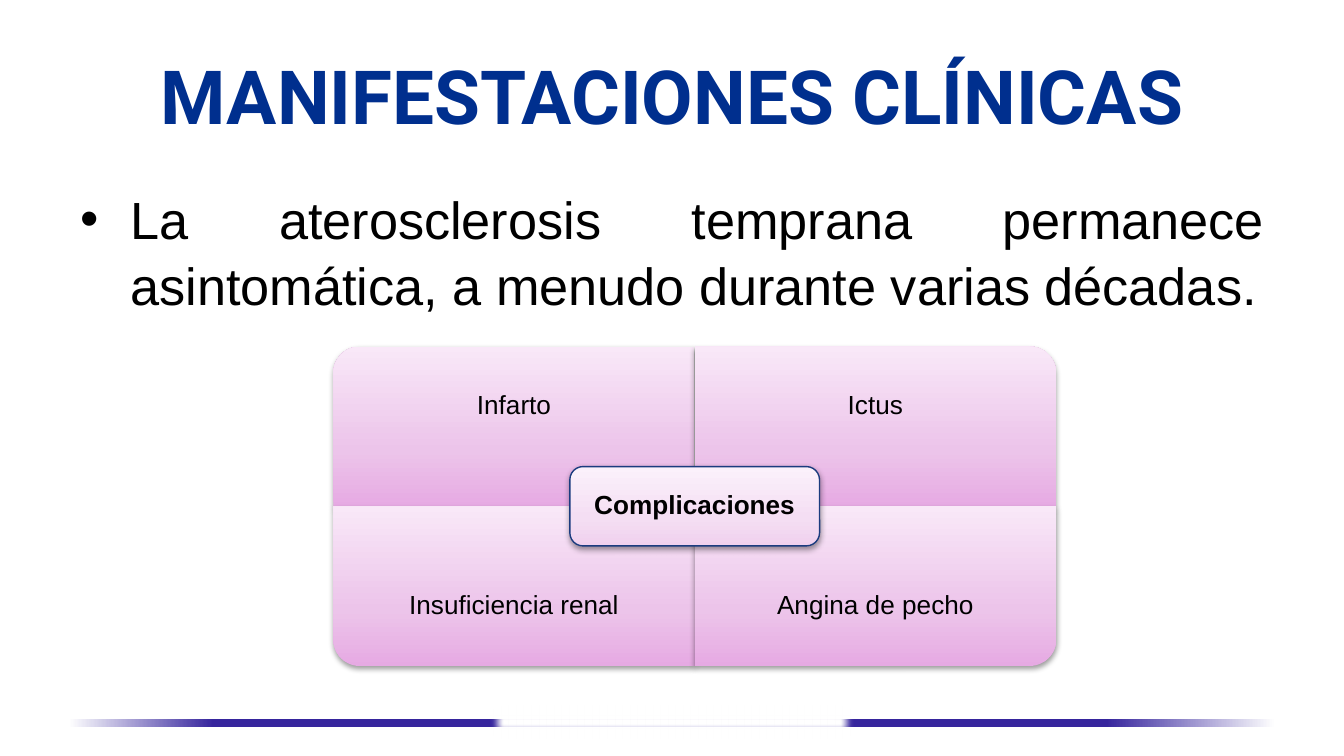
from pptx import Presentation
from pptx import util as u
from pptx.dml.color import RGBColor
from pptx.enum import shapes, text
from pptx.oxml import parse_xml
from pptx.oxml.ns import nsdecls, qn

COLORS = {"title": "002F8E", "text": "000000", "white": "FFFFFF",
          "bar": "36259D", "hub_line": "1B3B7F"}
BAR_STOPS = [(0, COLORS["white"]), (12, COLORS["bar"]),
             (86, COLORS["bar"]), (100, COLORS["white"])]
CELL_STOPS = [(0, "E6AAE3"), (35, "ECC4EA"), (100, "F9E8F8")]
HUB_STOPS = [(0, "F0D1EE"), (35, "F4DEF3"), (100, "FBF1FB")]


def element(tag, attributes="", inner=""):
    return parse_xml(f"<a:{tag} {nsdecls('a')} {attributes}>{inner}</a:{tag}>")


class ClinicalSlide:
    """Holds the style and the current slide; lengths are in centimetres."""
    font = "Arial"

    def __init__(self, deck):
        self.slide = deck.slides.add_slide(deck.slide_layouts[5])

    def style(self, paragraph, size, color="text", bold=False, font=None):
        for run in paragraph.runs:
            run.font.name = font or self.font
            run.font.size = u.Pt(size)
            run.font.bold = bold
            run.font.color.rgb = RGBColor.from_string(COLORS[color])

    def title(self, words, left, top, width, height):
        heading = self.slide.shapes.title
        heading.left, heading.top = u.Cm(left), u.Cm(top)
        heading.width, heading.height = u.Cm(width), u.Cm(height)
        frame = heading.text_frame
        frame.text = words
        frame.vertical_anchor = text.MSO_ANCHOR.MIDDLE
        frame.paragraphs[0].alignment = text.PP_ALIGN.CENTER
        self.style(frame.paragraphs[0], 40, "title", True, "Roboto")

    def textbox(self, words, left, top, width, height):
        box = self.slide.shapes.add_textbox(u.Cm(left), u.Cm(top), u.Cm(width), u.Cm(height))
        box.text_frame.word_wrap = True
        box.text_frame.text = words
        return box.text_frame

    def bullet(self, words, *place):
        paragraph = self.textbox(words, *place).paragraphs[0]
        paragraph.alignment = text.PP_ALIGN.JUSTIFY
        paragraph.line_spacing = 1.05
        properties = paragraph._p.get_or_add_pPr()
        properties.set("marL", str(u.Cm(0.95)))
        properties.set("indent", str(-u.Cm(0.95)))
        properties.append(element("buFont", 'typeface="Arial"'))
        properties.append(element("buChar", 'char="•"'))
        self.style(paragraph, 28)

    def label(self, words, *place, inset=0.28, bold=False):
        frame = self.textbox(words, *place)
        frame.vertical_anchor = text.MSO_ANCHOR.MIDDLE
        frame.margin_left = frame.margin_right = u.Cm(inset)
        frame.margin_top = frame.margin_bottom = u.Cm(inset)
        frame.paragraphs[0].alignment = text.PP_ALIGN.CENTER
        frame.paragraphs[0].line_spacing = 0.9
        self.style(frame.paragraphs[0], 14, bold=bold)

    def block(self, kind, left, top, width, height, rotation=0, line=None):
        shape = self.slide.shapes.add_shape(
            kind, u.Cm(left), u.Cm(top), u.Cm(width), u.Cm(height))
        shape.rotation = rotation
        shape.shadow.inherit = False
        if line:
            shape.line.color.rgb = RGBColor.from_string(COLORS[line])
            shape.line.width = u.Pt(0.75)
        else:
            shape.line.fill.background()
        return shape

    def gradient(self, shape, stops, angle):
        inner = "".join(f'<a:gs pos="{position * 1000}"><a:srgbClr val="{color}"/></a:gs>'
                        for position, color in stops)
        fill = element("gradFill", 'rotWithShape="0"',
                       f'<a:gsLst>{inner}</a:gsLst><a:lin ang="{angle * 60000}" scaled="0"/>')
        shape._element.spPr.find(qn("a:prstGeom")).addnext(fill)

    def effect(self, shape, tag, attributes, inner=""):
        effects = shape._element.spPr.find(qn("a:effectLst"))
        effects.append(element(tag, attributes, inner))

    def raised_block(self, kind, stops, *place, **options):
        shape = self.block(kind, *place, **options)
        self.gradient(shape, stops, 270)
        self.effect(shape, "outerShdw",
                    'blurRad="40000" dist="20000" dir="5400000" rotWithShape="0"',
                    '<a:srgbClr val="000000"><a:alpha val="38000"/></a:srgbClr>')

    def footer_bar(self):
        rectangle = shapes.MSO_SHAPE.RECTANGLE
        bar = self.block(rectangle, 1.3, 13.59, 22.8, 0.15)
        self.gradient(bar, BAR_STOPS, 0)
        gap = self.block(rectangle, 9.2, 13.28, 7, 0.74)
        gap.fill.solid()
        gap.fill.fore_color.rgb = RGBColor.from_string(COLORS["white"])
        self.effect(gap, "softEdge", 'rad="63500"')

    def matrix(self, hub, cells, left, top, cell_w, cell_h):
        center_x, center_y = left + cell_w, top + cell_h
        label_h = 2.26

        # Quadrants: each rounded corner is turned to the outside
        for index, (words, rotation) in enumerate(cells):
            row, column = divmod(index, 2)
            x, y = left + column * cell_w, top + row * cell_h
            w, h = (cell_h, cell_w) if rotation % 180 else (cell_w, cell_h)
            self.raised_block(shapes.MSO_SHAPE.ROUND_1_RECTANGLE, CELL_STOPS,
                              x + (cell_w - w) / 2, y + (cell_h - h) / 2, w, h,
                              rotation=rotation)
            self.label(words, x, y + row * (cell_h - label_h), cell_w, label_h)

        # Hub over the shared corner
        hub_w, hub_h = 4.72, 1.5
        place = center_x - hub_w / 2, center_y - hub_h / 2, hub_w, hub_h
        self.raised_block(shapes.MSO_SHAPE.ROUNDED_RECTANGLE, HUB_STOPS, *place,
                          line="hub_line")
        self.label(hub, *place, inset=0.15, bold=True)


def main():
    deck = Presentation()
    deck.slide_width, deck.slide_height = u.Cm(25.4), u.Cm(14.29)
    page = ClinicalSlide(deck)

    # Footer decoration
    page.footer_bar()

    # Heading and statement
    page.title("MANIFESTACIONES CLÍNICAS", 1.27, 0.6, 22.86, 2.39)
    page.bullet("La aterosclerosis temprana permanece asintomática, "
                "a menudo durante varias décadas.", 1.27, 3.35, 22.86, 2.8)

    # Complications matrix
    page.matrix("Complicaciones",
                [("Infarto", 270), ("Ictus", 0),
                 ("Insuficiencia renal", 180), ("Angina de pecho", 90)],
                6.3, 6.55, 6.83, 3.02)

    deck.save("out.pptx")


if __name__ == "__main__":
    main()
